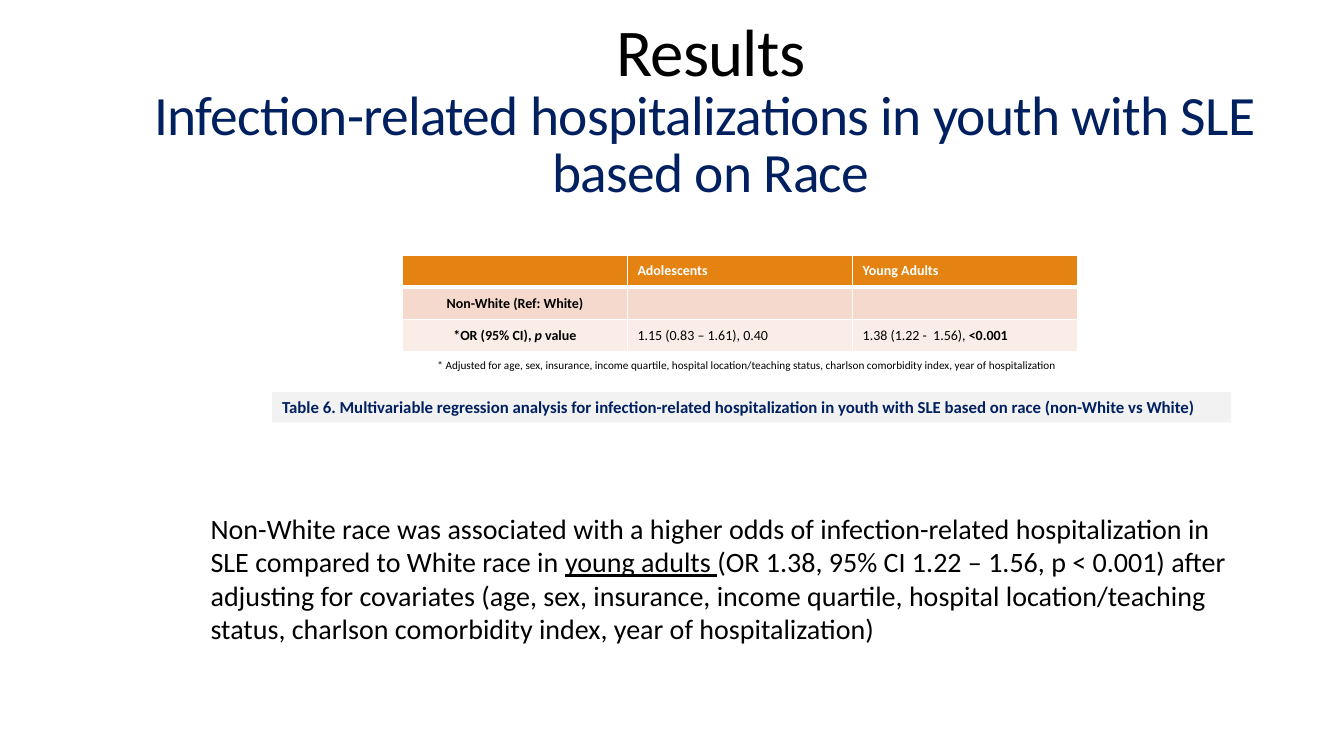
from lxml.etree import SubElement
from pptx import Presentation
from pptx.dml.color import RGBColor
from pptx.enum.shapes import MSO_SHAPE as SHAPE
from pptx.enum.text import MSO_ANCHOR as ANCHOR, PP_ALIGN as ALIGN
from pptx.oxml.ns import qn
from pptx.util import Pt

PX = 9144  # EMU per px, 100 px to the inch
FONT = "Calibri"
BLACK, WHITE, NAVY = "000000", "FFFFFF", "002060"
ORANGE, PEACH, PALE, GREY = "E48312", "F5D9CC", "FAEDE7", "F2F2F2"

COVARIATES = ("age, sex, insurance, income quartile, hospital location/teaching status, "
              "charlson comorbidity index, year of hospitalization")


def px(*lengths):
    return [n * PX for n in lengths]


def rgb(hex_color):
    return RGBColor.from_string(hex_color)


def add_run(p, text, size, color=BLACK, bold=False, italic=False, underline=False):
    r = p.add_run()
    r.text = text
    f = r.font
    f.name, f.size = FONT, Pt(size)
    f.bold, f.italic, f.underline = bold, italic, underline
    f.color.rgb = rgb(color)
    return r


def add_title(s, box, lines):
    sp = s.shapes.title
    sp.left, sp.top, sp.width, sp.height = px(*box)
    tf = sp.text_frame
    tf.word_wrap = True
    tf.vertical_anchor = ANCHOR.BOTTOM
    tf.margin_bottom = 76 * PX
    p = tf.paragraphs[0]
    p.alignment, p.line_spacing = ALIGN.CENTER, 0.85
    for i, (text, size, color) in enumerate(lines):
        if i:
            p.add_line_break()
        r = add_run(p, text, size, color)
        r.font._element.set("spc", "-50")


def add_text(s, box, runs, size):
    tf = s.shapes.add_textbox(*px(*box)).text_frame
    tf.word_wrap = True
    for text, style in runs:
        add_run(tf.paragraphs[0], text, size, **style)


def add_caption(s, box, text):
    sp = s.shapes.add_shape(SHAPE.RECTANGLE, *px(*box))
    sp.shadow.inherit = False
    sp.fill.solid()
    sp.fill.fore_color.rgb = rgb(GREY)
    sp.line.fill.background()
    p = sp.text_frame.paragraphs[0]
    p.alignment = ALIGN.LEFT
    add_run(p, text, 12, NAVY, bold=True)


def set_borders(cell, bottom):
    """Draw white cell borders; they must come before the fill."""
    tc_pr = cell._tc.get_or_add_tcPr()
    for side, width in (("L", 1), ("R", 1), ("T", 1), ("B", bottom)):
        ln = SubElement(tc_pr, qn(f"a:ln{side}"), w=str(Pt(width)))
        fill = SubElement(ln, qn("a:solidFill"))
        SubElement(fill, qn("a:srgbClr"), val=WHITE)


def add_table(s, box, rows, fills):
    table = s.shapes.add_table(len(rows), len(rows[0]), *px(*box)).table
    for i, (row, fill) in enumerate(zip(rows, fills)):
        for j, runs in enumerate(row):
            cell = table.cell(i, j)
            set_borders(cell, bottom=3 if i == 0 else 1)
            cell.fill.solid()
            cell.fill.fore_color.rgb = rgb(fill)
            cell.vertical_anchor = ANCHOR.MIDDLE
            p = cell.text_frame.paragraphs[0]
            p.alignment = ALIGN.LEFT if j else ALIGN.CENTER
            p.font.size = Pt(10)
            for text, style in runs:
                add_run(p, text, 10, **style)


def main():
    prs = Presentation()
    prs.slide_width, prs.slide_height = px(1333, 750)
    s = prs.slides.add_slide(prs.slide_layouts[5])

    # Title
    add_title(s, (48, 17, 1314, 261), [
        ("Results", 47.7, BLACK),
        ("Infection-related hospitalizations in youth with SLE ", 39.6, NAVY),
        ("based on Race", 39.6, NAVY),
    ])

    # Odds ratio table
    bold, head = {"bold": True}, {"bold": True, "color": WHITE}
    rows = [
        [[], [("Adolescents", head)], [("Young Adults", head)]],
        [[("Non-White (Ref: White)", bold)], [], []],
        [[("*OR (95% CI), ", bold), ("p", {"bold": True, "italic": True}), (" value", bold)],
         [("1.15 (0.83 – 1.61), 0.40", {})],
         [("1.38 (1.22 -  1.56), ", {}), ("<0.001", bold)]],
    ]
    add_table(s, (399, 253, 670, 96), rows, [ORANGE, PEACH, PALE])

    # Footnote and caption
    add_text(s, (424, 351, 670, 24), [(f"* Adjusted for {COVARIATES}", {})], 8)
    add_caption(s, (270, 389, 951, 30),
                "Table 6. Multivariable regression analysis for infection-related "
                "hospitalization in youth with SLE based on race (non-White vs White)")

    # Finding
    add_text(s, (199, 502, 1045, 145), [
        ("Non-White race was associated with a higher odds of infection-related "
         "hospitalization in SLE compared to White race in ", {}),
        ("young adults ", {"underline": True}),
        ("(OR 1.38, 95% CI 1.22 – 1.56, p < 0.001) after adjusting for covariates "
         f"({COVARIATES})", {}),
    ], 20)

    prs.save("out.pptx")


if __name__ == "__main__":
    main()
